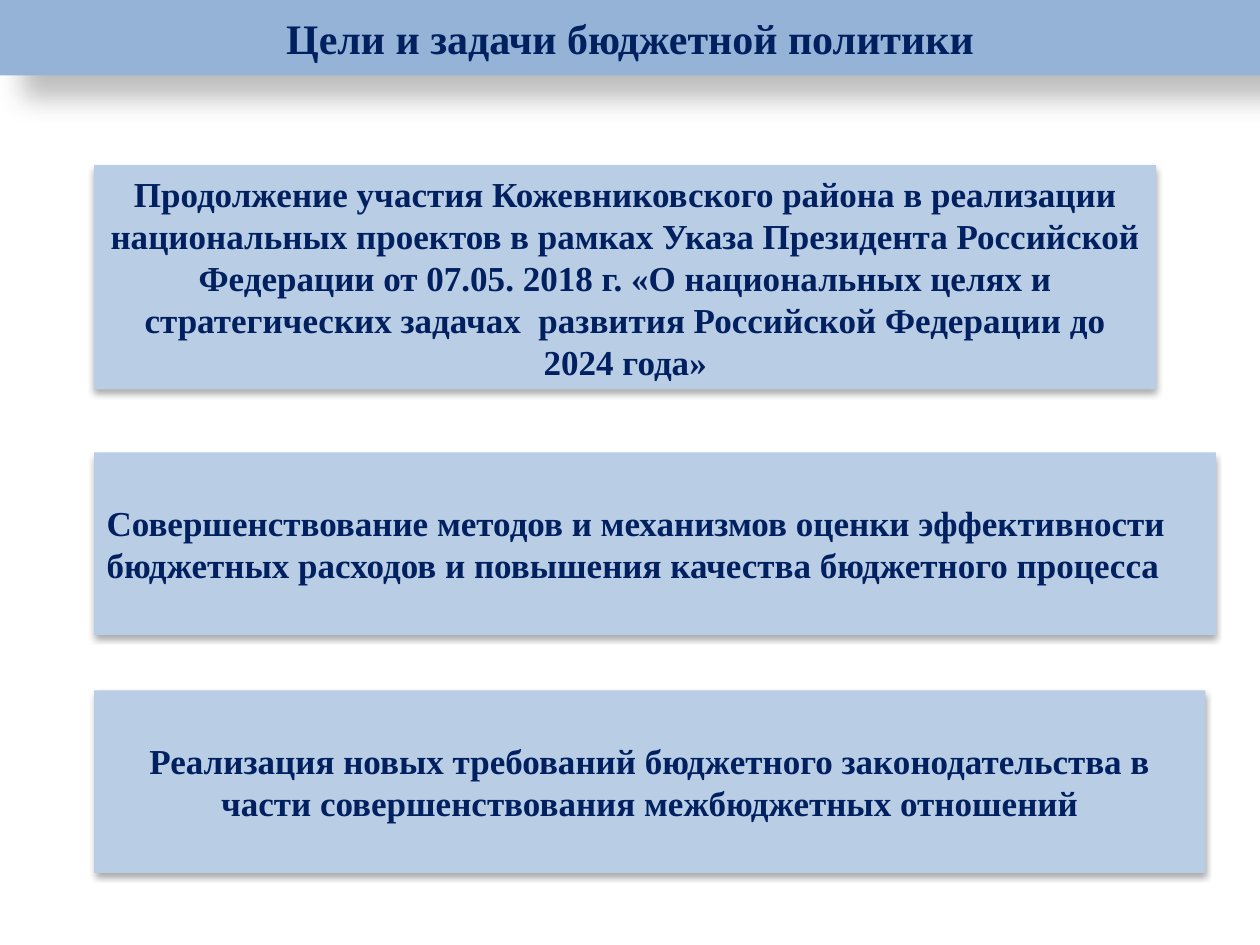
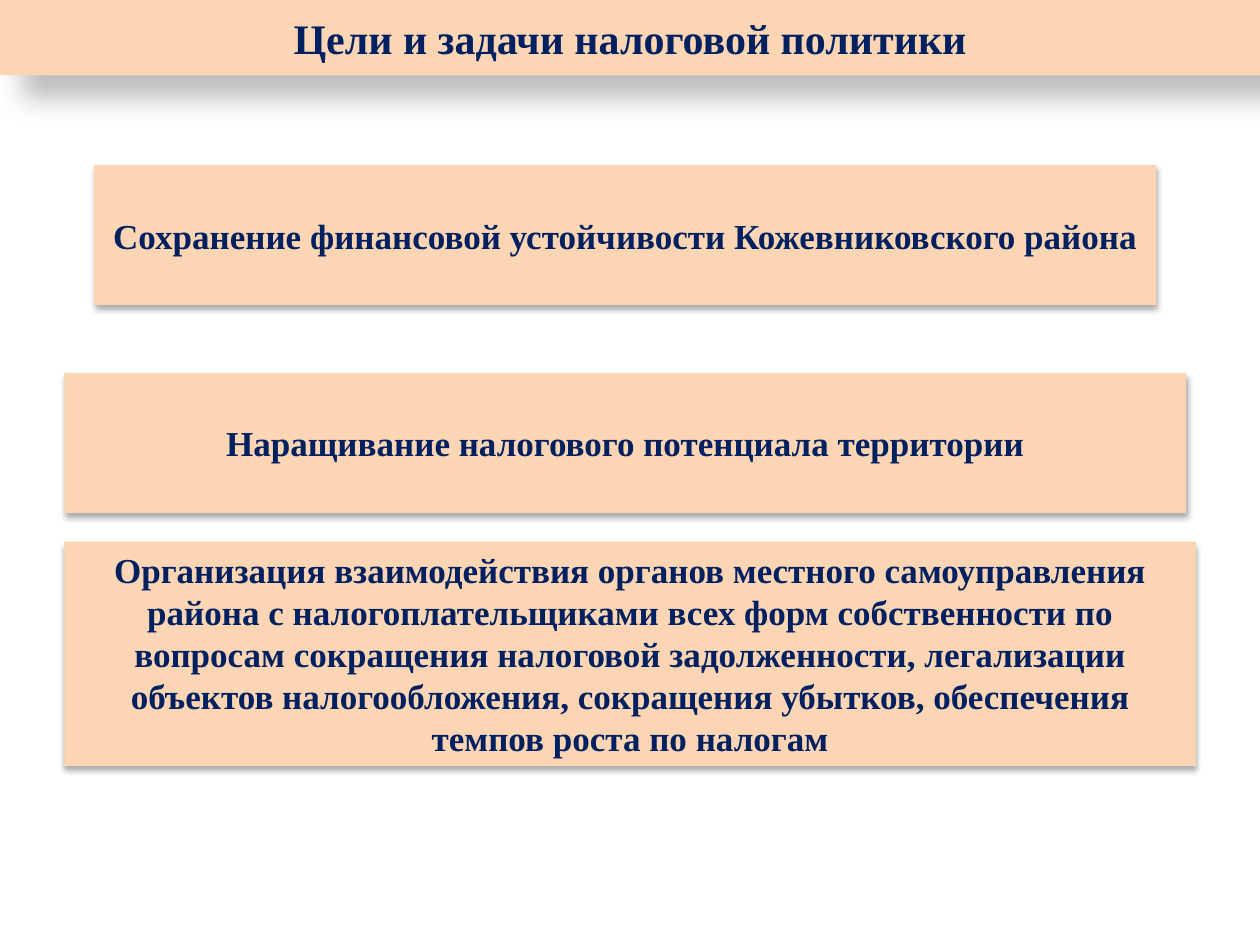
from lxml.etree import SubElement
from pptx import Presentation
from pptx.dml.color import RGBColor
from pptx.enum.shapes import MSO_SHAPE
from pptx.enum.text import MSO_ANCHOR, MSO_AUTO_SIZE, PP_ALIGN
from pptx.oxml.ns import qn
from pptx.util import Cm, Pt

# Content: each goal is (text, left, top, width, height, alignment), in cm
CENTER, LEFT = PP_ALIGN.CENTER, PP_ALIGN.LEFT
SLIDES = [
    {
        "title": "Цели и задачи бюджетной политики",
        "band": "95B3D7",
        "box": "B9CDE5",
        "goals": [
            ("Продолжение участия Кожевниковского района в реализации "
             "национальных проектов в рамках Указа Президента Российской "
             "Федерации от 07.05. 2018 г. «О национальных целях и "
             "стратегических задачах  развития Российской Федерации до "
             "2024 года»", 1.9, 3.33, 21.41, 4.52, CENTER),
            ("Совершенствование методов и механизмов оценки эффективности "
             "бюджетных расходов и повышения качества бюджетного процесса",
             1.9, 9.12, 22.61, 3.68, LEFT),
            ("Реализация новых требований бюджетного законодательства в "
             "части совершенствования межбюджетных отношений",
             1.9, 13.92, 22.4, 3.68, CENTER),
        ],
    },
    {
        "title": "Цели и задачи налоговой политики",
        "band": "FCD5B5",
        "box": "FCD5B5",
        "goals": [
            ("Сохранение финансовой устойчивости Кожевниковского района",
             1.9, 3.33, 21.41, 2.82, CENTER),
            ("Наращивание налогового потенциала территории",
             1.3, 7.52, 22.61, 2.82, CENTER),
            ("Организация взаимодействия органов местного самоуправления "
             "района с налогоплательщиками всех форм собственности по "
             "вопросам сокращения налоговой задолженности, легализации "
             "объектов налогообложения, сокращения убытков, обеспечения "
             "темпов роста по налогам", 1.3, 10.92, 22.81, 4.52, CENTER),
        ],
    },
]

# Shared style
FONT, INK = "Times New Roman", "002060"
SLIDE_W, SLIDE_H, BAND_H = 25.4, 19.05, 1.52
BAND_SHADOW = {"blur": 15, "dist": 18, "angle": 45, "opacity": 26}
BOX_SHADOW = {"blur": 3.5, "dist": 2.2, "angle": 90, "opacity": 32}


def color(value):
    return RGBColor.from_string(value)


def add_shadow(sp, blur, dist, angle, opacity):
    sp.shadow.inherit = False
    effects = sp._element.spPr.find(qn("a:effectLst"))
    shadow = SubElement(effects, qn("a:outerShdw"), blurRad=str(Pt(blur)),
                        dist=str(Pt(dist)), dir=str(angle * 60000),
                        algn="tl", rotWithShape="0")
    tint = SubElement(shadow, qn("a:srgbClr"), val="000000")
    SubElement(tint, qn("a:alpha"), val=str(opacity * 1000))


def write(sp, text, size=20, align=CENTER):
    tf = sp.text_frame
    tf.word_wrap = True
    tf.auto_size = MSO_AUTO_SIZE.NONE
    tf.vertical_anchor = MSO_ANCHOR.MIDDLE
    p = tf.paragraphs[0]
    p.alignment = align
    r = p.add_run()
    r.text = text
    r.font.name, r.font.size, r.font.bold = FONT, Pt(size), True
    r.font.color.rgb = color(INK)


def paint(sp, fill, shadow):
    sp.fill.solid()
    sp.fill.fore_color.rgb = color(fill)
    sp.line.fill.background()
    add_shadow(sp, **shadow)


def add_title(s, text, fill):
    sp = s.shapes.title
    sp.left, sp.top, sp.width, sp.height = 0, 0, Cm(SLIDE_W), Cm(BAND_H)
    paint(sp, fill, BAND_SHADOW)
    write(sp, text, size=24)


def add_goal(s, text, left, top, width, height, align, fill):
    sp = s.shapes.add_shape(MSO_SHAPE.RECTANGLE, Cm(left), Cm(top),
                            Cm(width), Cm(height))
    paint(sp, fill, BOX_SHADOW)
    write(sp, text, align=align)


def main():
    prs = Presentation()
    prs.slide_width, prs.slide_height = Cm(SLIDE_W), Cm(SLIDE_H)
    title_only = prs.slide_layouts[5]
    for content in SLIDES:
        s = prs.slides.add_slide(title_only)
        add_title(s, content["title"], content["band"])
        for goal in content["goals"]:
            add_goal(s, *goal, fill=content["box"])
    prs.save("out.pptx")


if __name__ == "__main__":
    main()
